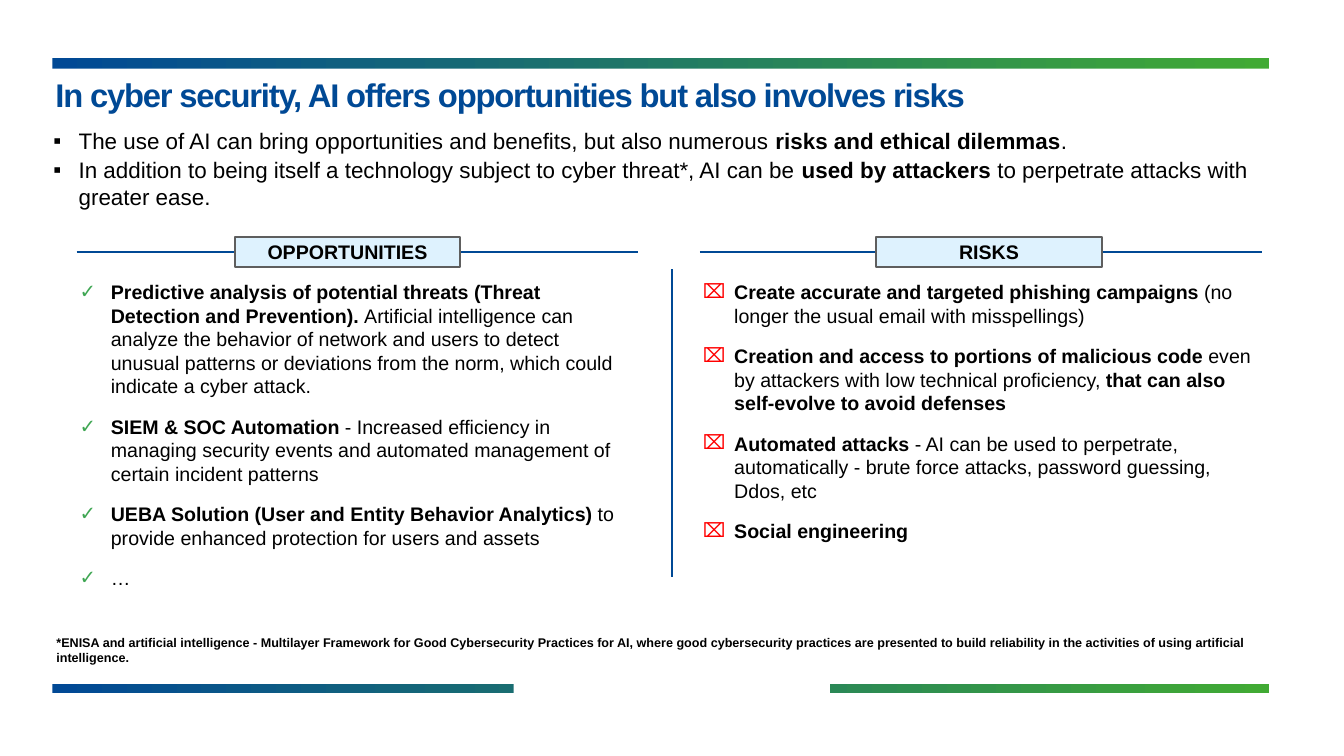
from lxml import etree
from pptx import Presentation
from pptx.dml.color import RGBColor
from pptx.enum import shapes, text
from pptx.oxml.ns import qn
from pptx.util import Inches, Pt

NAVY, BLACK, WHITE = "004995", "000000", "FFFFFF"


def rgb(value):
    return RGBColor.from_string(value)


def write(sp, paras, size, bullet=None, color=BLACK, indent=0, before=0, after=0, insets=(0.06, 0.06)):
    """Fill a shape with paragraphs, each a list of (text, bold) runs."""
    tf = sp.text_frame
    tf.word_wrap = True
    tf.auto_size = text.MSO_AUTO_SIZE.NONE
    tf.margin_left = tf.margin_right = Inches(insets[0])
    tf.margin_top = tf.margin_bottom = Inches(insets[1])
    for i, runs in enumerate(paras):
        p = tf.paragraphs[0] if i == 0 else tf.add_paragraph()
        p.space_before = Pt(before if i else 0)
        p.space_after = Pt(after)
        if bullet:
            pPr = p._p.get_or_add_pPr()
            pPr.set("marL", str(Inches(indent)))
            pPr.set("indent", str(-Inches(indent)))
            clr = etree.SubElement(pPr, qn("a:buClr"))
            etree.SubElement(clr, qn("a:srgbClr"), val=color)
            etree.SubElement(pPr, qn("a:buFont"), typeface="Arial")
            etree.SubElement(pPr, qn("a:buChar"), char=bullet)
        for words, bold in runs:
            r = p.add_run()
            r.text = words
            r.font.name, r.font.size, r.font.bold = "Arial", Pt(size), bold
            r.font.color.rgb = rgb(BLACK)


prs = Presentation()
prs.slide_width, prs.slide_height = Inches(26.67), Inches(15)
s = prs.slides.add_slide(prs.slide_layouts[5])

# Frame: gradient panel, white page over it, white gap in the bottom bar
for left, top, width, height, fill in [
    (1.04, 1.16, 24.15, 12.6, ("014995", "41AA34")),
    (0.97, 1.36, 24.72, 12.21, WHITE),
    (10.19, 12.9, 6.28, 1.47, WHITE),
]:
    sp = s.shapes.add_shape(shapes.MSO_SHAPE.RECTANGLE, Inches(left), Inches(top),
                            Inches(width), Inches(height))
    sp.shadow.inherit = False
    sp.line.fill.background()
    if fill == WHITE:
        sp.fill.solid()
        sp.fill.fore_color.rgb = rgb(WHITE)
    else:
        sp.fill.gradient()
        sp.fill.gradient_angle = 0
        for stop, color, position in zip(sp.fill.gradient_stops, fill, (0, 1)):
            stop.color.rgb, stop.position = rgb(color), position

# Title, brought in front of the frame
title = s.shapes.title
s.shapes._spTree.append(title._element)
title.left, title.top, title.width, title.height = Inches(1.04), Inches(1.57), Inches(24.15), Inches(0.79)
write(title, [[("In cyber security, AI offers opportunities but also involves risks", True)]], 46.8)
title.text_frame.vertical_anchor = text.MSO_ANCHOR.TOP
p = title.text_frame.paragraphs[0]
p.alignment, p.line_spacing = text.PP_ALIGN.LEFT, 0.8
p.runs[0].font.color.rgb = rgb(NAVY)
p.runs[0].font._element.set("spc", "-170")

# Introduction
intro = s.shapes.add_textbox(Inches(1), Inches(2.44), Inches(24.19), Inches(1.81))
write(intro, [
    [("The use of AI can bring opportunities and benefits, but also numerous ", False),
     ("risks and ethical dilemmas", True), (".", False)],
    [("In addition to being itself a technology subject to cyber threat*, AI can be ", False),
     ("used by attackers ", True), ("to perpetrate attacks with greater ease.", False)],
], 32, "▪", indent=0.5, after=3)
intro.text_frame.vertical_anchor = text.MSO_ANCHOR.MIDDLE

# Rules: one above each column, one between them
for x1, y1, x2, y2 in [(1.52, 5, 12.67, 5), (13.89, 5, 25.04, 5), (13.33, 5.34, 13.33, 11.44)]:
    rule = s.shapes.add_connector(shapes.MSO_CONNECTOR.STRAIGHT,
                                  Inches(x1), Inches(y1), Inches(x2), Inches(y2))
    rule.line.color.rgb = rgb(NAVY)
    rule.line.width = Pt(2.25)
    etree.SubElement(rule._element.spPr, qn("a:effectLst"))

# Columns: heading box and checklist
opportunities = [
    [("Predictive analysis of potential threats (Threat Detection and Prevention). ", True),
     ("Artificial intelligence can analyze the behavior of network and users to detect unusual "
      "patterns or deviations from the norm, which could indicate a cyber attack.", False)],
    [("SIEM & SOC Automation ", True),
     ("- Increased efficiency in managing security events and automated management of "
      "certain incident patterns", False)],
    [("UEBA Solution (User and Entity Behavior Analytics)", True),
     (" to provide enhanced protection for users and assets", False)],
    [("…", False)],
]
risks = [
    [("Create accurate and targeted phishing campaigns ", True),
     ("(no longer the usual email with misspellings)", False)],
    [("Creation and access to portions of malicious code ", True),
     ("even by attackers with low technical proficiency, ", False),
     ("that can also self-evolve to avoid defenses", True)],
    [("Automated attacks ", True),
     ("- AI can be used to perpetrate, automatically - brute force attacks, "
      "password guessing, Ddos, etc", False)],
    [("Social engineering", True)],
]
for heading, box_left, left, width, height, items, mark, color in [
    ("OPPORTUNITIES", 4.66, 1.52, 11.08, 7.45, opportunities, "✓", "3EA652"),
    ("RISKS", 17.39, 13.89, 11.15, 7.32, risks, "⌧", "FF0000"),
]:
    box = s.shapes.add_shape(shapes.MSO_SHAPE.RECTANGLE, Inches(box_left), Inches(4.71),
                             Inches(4.47), Inches(0.58))
    box.shadow.inherit = False
    box.fill.solid()
    box.fill.fore_color.rgb = rgb("DEF2FE")
    box.line.color.rgb = rgb("5E5E5E")
    box.line.width = Pt(3)
    write(box, [[(heading, True)]], 28)
    box.text_frame.vertical_anchor = text.MSO_ANCHOR.MIDDLE
    box.text_frame.paragraphs[0].alignment = text.PP_ALIGN.CENTER

    checklist = s.shapes.add_textbox(Inches(left), Inches(5.5), Inches(width), Inches(height))
    write(checklist, items, 28, mark, color, indent=0.62, before=12, after=12)

# Footnote
note = s.shapes.add_textbox(Inches(1.02), Inches(12.55), Inches(24.18), Inches(1.01))
write(note, [[("*ENISA and artificial intelligence - Multilayer Framework for Good Cybersecurity Practices "
               "for AI, where good cybersecurity practices are presented to build reliability in the "
               "activities of using artificial intelligence.", True)]], 18, insets=(0.1, 0.05))

prs.save("out.pptx")
